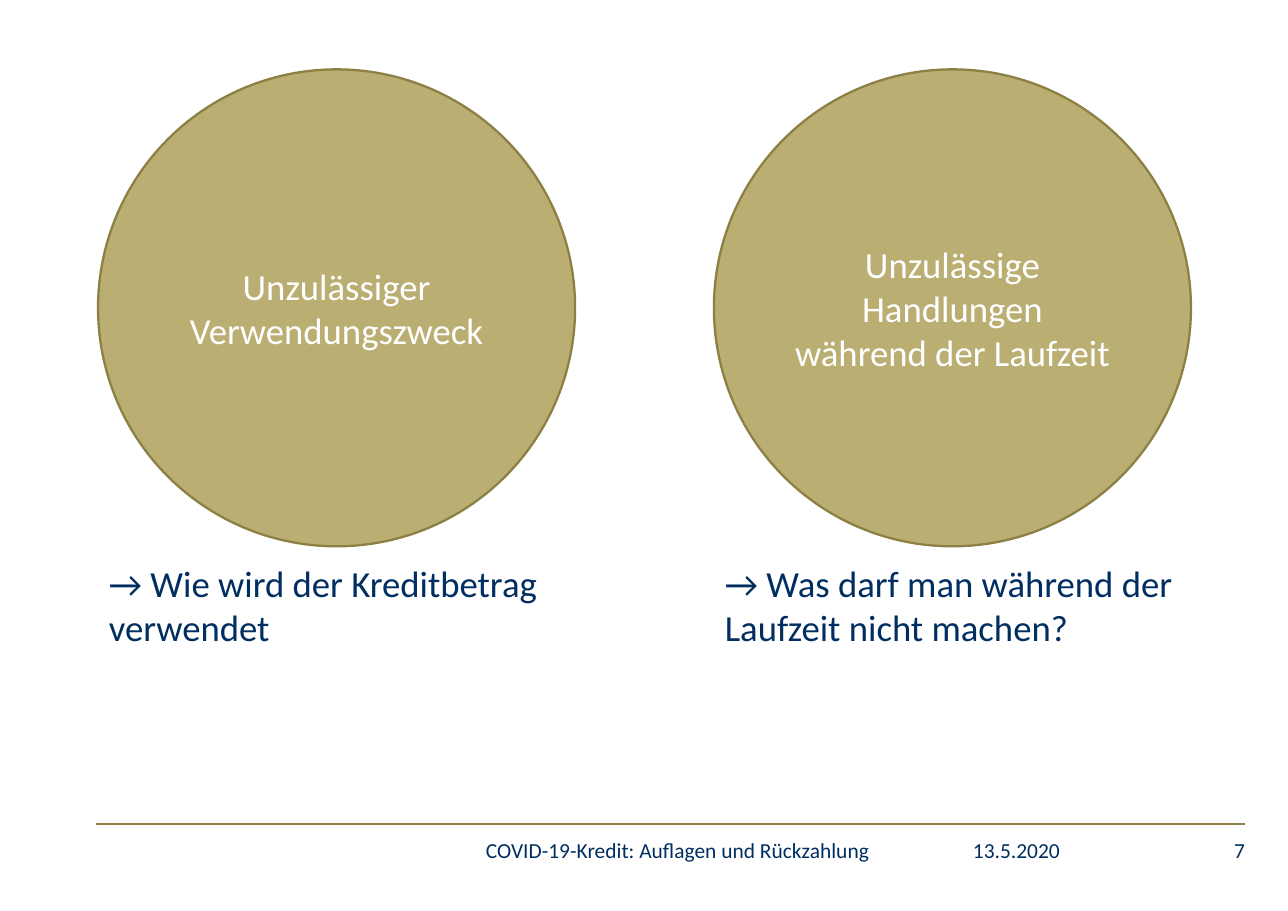
"""Build a slide with two labelled circles, their questions and a footer."""
from pptx import Presentation
from pptx.dml.color import RGBColor
from pptx.enum import shapes, text
from pptx.oxml.ns import qn
from pptx.util import Inches, Pt
from lxml import etree

NAVY, GOLD, SAND, WHITE = "002E60", "8D8045", "BAAE72", "FFFFFF"
TOPICS = [
    ("Unzulässiger Verwendungszweck", "→ Wie wird der Kreditbetrag verwendet"),
    ("Unzulässige Handlungen während der Laufzeit",
     "→ Was darf man während der Laufzeit nicht machen?"),
]
FOOTER = [
    ("COVID-19-Kredit: Auflagen und Rückzahlung", 4.41, 3.94, "LEFT"),
    ("13.5.2020", 8.44, 1.18, "RIGHT"),
    ("7", 10.81, 0.49, "RIGHT"),
]
LEFT, STEP, TOP, SIZE = 0.89, 5.59, 0.63, 4.33


def rgb(code):
    return RGBColor.from_string(code)


def write(shape, words, size=24, color=NAVY, align="LEFT", anchor="TOP", inset=None):
    frame = shape.text_frame
    frame.word_wrap = True
    frame.vertical_anchor = getattr(text.MSO_ANCHOR, anchor)
    if inset is not None:
        frame.margin_left = frame.margin_right = Inches(inset)
        frame.margin_top = frame.margin_bottom = Inches(inset)
    para = frame.paragraphs[0]
    para.alignment = getattr(text.PP_ALIGN, align)
    run = para.add_run()
    run.text = words
    run.font.name = "Calibri"
    run.font.size = Pt(size)
    run.font.color.rgb = rgb(color)


def stroke(line):
    line.color.rgb = rgb(GOLD)
    line.width = Pt(1.5)


def main():
    deck = Presentation()
    deck.slide_width, deck.slide_height = Inches(11.69), Inches(8.27)
    slide = deck.slides.add_slide(deck.slide_layouts[6])
    items = slide.shapes

    rule = items.add_connector(shapes.MSO_CONNECTOR.STRAIGHT, Inches(0.87),
                               Inches(7.48), Inches(11.3), Inches(7.48))
    stroke(rule.line)
    etree.SubElement(rule.element.spPr, qn("a:effectLst"))
    for words, left, width, align in FOOTER:
        box = items.add_textbox(Inches(left), Inches(7.6), Inches(width), Inches(0.47))
        write(box, words, size=14, align=align, inset=0)

    for col, (label, question) in enumerate(TOPICS):
        left = Inches(LEFT + col * STEP)
        disc = items.add_shape(shapes.MSO_SHAPE.OVAL, left, Inches(TOP),
                               Inches(SIZE), Inches(SIZE))
        disc.shadow.inherit = False
        disc.fill.solid()
        disc.fill.fore_color.rgb = rgb(SAND)
        stroke(disc.line)
        write(disc, label, color=WHITE, align="CENTER", anchor="MIDDLE")
        box = items.add_textbox(left, Inches(5.04), Inches(4.41), Inches(0.91))
        write(box, question)
        box.text_frame.auto_size = text.MSO_AUTO_SIZE.SHAPE_TO_FIT_TEXT

    deck.save("out.pptx")


if __name__ == "__main__":
    main()
